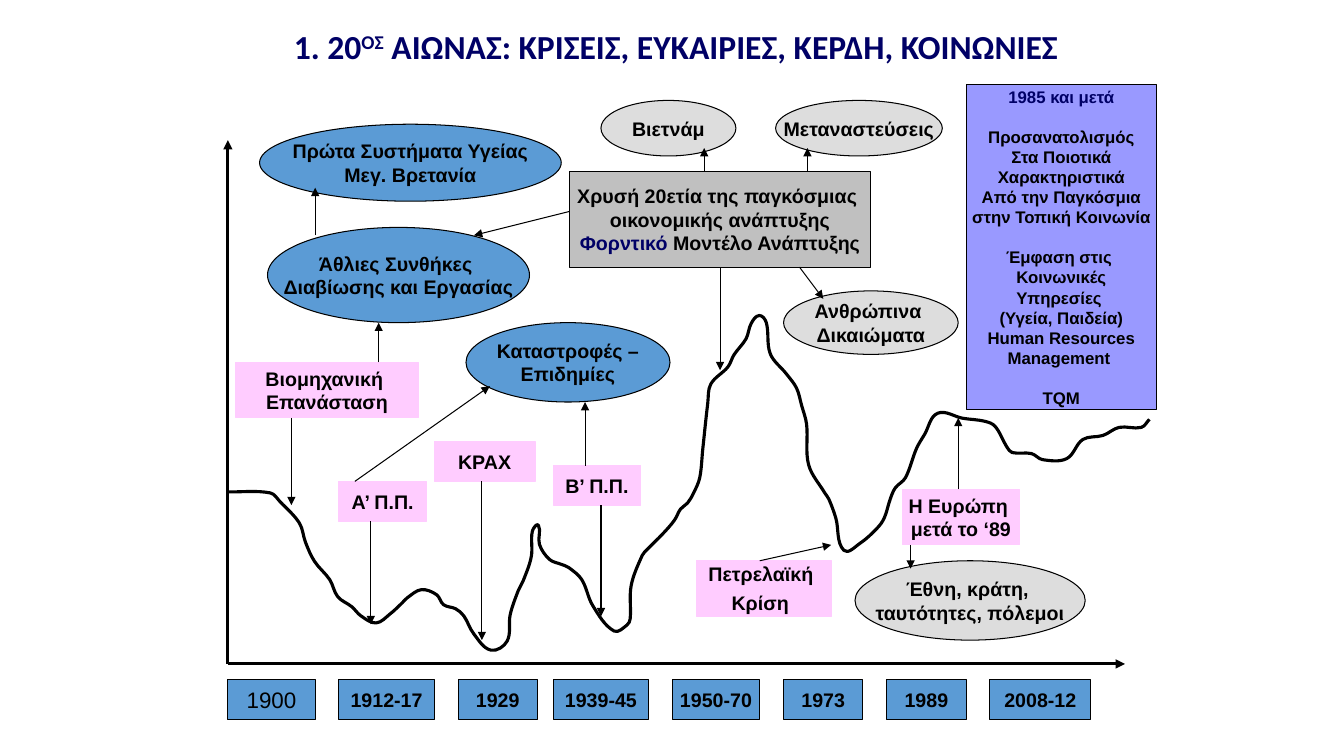
from math import hypot

from pptx import Presentation
from pptx.dml.color import RGBColor
from pptx.enum.shapes import MSO_CONNECTOR, MSO_SHAPE
from pptx.enum.text import MSO_ANCHOR, PP_ALIGN
from pptx.oxml.ns import qn
from pptx.util import Cm, Inches, Pt
from lxml.etree import SubElement

# Content: positions are grid cells (column, row) from the top of the vertical axis
COLORS = {"navy": "000066", "black": "000000", "blue": "5B9BD5", "pink": "FFCCFF",
          "silver": "C0C0C0", "gray": "DDDDDD", "violet": "9999FF"}
CELL, AXIS_LEFT, AXIS_TOP = Cm(0.2), Inches(2.26), Inches(1.39)
AXIS_ROWS, AXIS_COLUMNS = 66, 113
YEAR_ROW, YEAR_ROWS = 68, 5
FONT = "Arial"

TITLE = [("1. 20", None), ("ΟΣ", "30000"), (" ΑΙΩΝΑΣ: ΚΡΙΣΕΙΣ, ΕΥΚΑΙΡΙΕΣ, ΚΕΡΔΗ, ΚΟΙΝΩΝΙΕΣ", None)]

# label, column, width, size, bold
YEARS = [("1900", 0, 11, 16, False), ("1912-17", 14, 12, 14, True),
         ("1929", 29, 10, 14, True), ("1939-45", 41, 12, 14, True),
         ("1950-70", 56, 11, 14, True), ("1973", 70, 10, 14, True),
         ("1989", 83, 10, 14, True), ("2008-12", 96, 12.7, 14, True)]

# lines, column, row, width, height; a line is a string or a list of (text, style)
EVENTS = [
    (["Βιομηχανική ", "Επανάσταση"], 1, 28, 23, 7),
    (["Α’ Π.Π."], 14, 43, 11, 5),
    (["ΚΡΑΧ"], 26, 38, 12.7, 5),
    (["Β’ Π.Π."], 41, 41, 11, 5),
    (["Πετρελαϊκή ", [("Κρίση", {}), (" ", {"size": 18, "bold": False})]], 59, 53, 17, 7),
    (["Η Ευρώπη ", "μετά το ‘89"], 85, 44, 14.7, 7),
]
HEALTH_EFFECTS = [
    (["Άθλιες Συνθήκες ", "Διαβίωσης και Εργασίας"], 5, 11, 33, 12),
    (["Καταστροφές –", "Επιδημίες"], 30, 23, 25.7, 10),
    (["Πρώτα Συστήματα Υγείας", "Μεγ. Βρετανία"], 4, -2, 38, 9.7),
]
SOCIAL_EFFECTS = [
    (["Βιετνάμ"], 47, -5, 17, 7),
    (["Ανθρώπινα ", "Δικαιώματα"], 70, 19, 22, 8),
    (["Μεταναστεύσεις"], 69, -5, 21, 7),
    (["Έθνη, κράτη, ", "ταυτότητες, πόλεμοι"], 79, 53, 29, 10),
]
GOLDEN_AGE = (["Χρυσή 20ετία της παγκόσμιας ", "οικονομικής ανάπτυξης",
               [("Φορντικό", {"color": "navy"}), (" Μοντέλο Ανάπτυξης", {})]], 43, 4, 38, 12)
# An empty entry opens a gap before the next line
AFTER_1985 = ([[("1985 και μετά", {"color": "navy"})], "",
               "Προσανατολισμός", "Στα Ποιοτικά", "Χαρακτηριστικά",
               "Από την Παγκόσμια", "στην Τοπική Κοινωνία", "",
               "Έμφαση στις ", "Κοινωνικές", "Υπηρεσίες ", "(Υγεία, Παιδεία)",
               "Human Resources", "Management ", "", "TQM"], 93, -7, 24, 41)

# start column, start row, end column, end row
ARROWS = [(8, 35, 8, 46), (18, 48, 18, 61), (32, 43, 32, 63), (47, 46, 47, 60),
          (19, 28, 19, 23), (11, 12, 11, 6), (16, 43, 33, 31), (45, 41, 45, 33),
          (67, 53, 76, 51), (60, 4, 60, 1), (72, 16, 75, 20), (43, 9, 31, 12),
          (73, 4, 73, 1), (92, 44, 92, 35), (86, 51, 86, 54)]
GOLDEN_ARROW = (62, 16, 62, 29)

# Points of the economic wave, in inches
WAVE = [
    (2.25, 4.88), (2.68, 4.89), (2.78, 4.98), (2.97, 5.19), (3.03, 5.38), (3.12, 5.57),
    (3.27, 5.75), (3.35, 5.92), (3.49, 6.02), (3.58, 6.11), (3.73, 6.18), (3.87, 6.09),
    (3.99, 5.98), (4.04, 5.93), (4.18, 5.85), (4.33, 5.9), (4.4, 6), (4.52, 6.04),
    (4.6, 6.11), (4.7, 6.29), (4.87, 6.45), (5.03, 6.36), (5.06, 6.1),
    (5.14, 5.86), (5.19, 5.76), (5.27, 5.52), (5.28, 5.27), (5.34, 5.21), (5.35, 5.4),
    (5.45, 5.55), (5.57, 5.6), (5.64, 5.63), (5.77, 5.75), (5.88, 6.01), (6.09, 6.26),
    (6.22, 6.2), (6.25, 6.14), (6.26, 5.81), (6.37, 5.51), (6.42, 5.45), (6.57, 5.3),
    (6.69, 5.16), (6.75, 5.05), (6.82, 4.99), (6.88, 4.89), (6.94, 4.74), (6.97, 4.46),
    (7.02, 4), (7.05, 3.81), (7.22, 3.64), (7.28, 3.52), (7.4, 3.36), (7.45, 3.21),
    (7.53, 3.13), (7.6, 3.2), (7.64, 3.51), (7.8, 3.71), (7.9, 3.85), (7.95, 4.02),
    (8, 4.21), (8.02, 4.61), (8.18, 4.89), (8.22, 4.95), (8.29, 5.14),
    (8.37, 5.46), (8.53, 5.39), (8.7, 5.24), (8.77, 5.14), (8.83, 4.95),
    (8.88, 4.84), (8.98, 4.74), (9.09, 4.45), (9.17, 4.31), (9.3, 4.1),
    (9.55, 4.15), (9.77, 4.18), (9.87, 4.23), (9.99, 4.44), (10.04, 4.49), (10.23, 4.5),
    (10.34, 4.56), (10.58, 4.55), (10.74, 4.36), (10.94, 4.32), (11.1, 4.24),
    (11.32, 4.24), (11.4, 4.16)]

presentation = Presentation()
presentation.slide_width, presentation.slide_height = Inches(13.33), Inches(7.5)
slide = presentation.slides.add_slide(presentation.slide_layouts[5])


def color(name):
    return RGBColor.from_string(COLORS[name])


def place(column, row):
    return int(AXIS_LEFT + column * CELL), int(AXIS_TOP + row * CELL)


def format_run(run, size, bold=True, color_name="black", font_name=FONT):
    font = run.font
    font.name, font.size, font.bold = font_name, Pt(size), bold
    font.color.rgb = color(color_name)


def write_lines(text_frame, lines, size, bold):
    text_frame.word_wrap = False
    text_frame.vertical_anchor = MSO_ANCHOR.MIDDLE
    paragraph, gap = text_frame.paragraphs[0], False
    for index, line in enumerate(lines):
        if not line:
            gap = True
            continue
        if index:
            paragraph = text_frame.add_paragraph()
        paragraph.alignment = PP_ALIGN.CENTER
        if gap:
            paragraph.space_before = Pt(size * 1.17)
            gap = False
        for text, style in [(line, {})] if isinstance(line, str) else line:
            run = paragraph.add_run()
            run.text = text
            format_run(run, style.get("size", size), style.get("bold", bold),
                       style.get("color", "black"))


def add_box(box, fill, line="black", kind=MSO_SHAPE.RECTANGLE, size=14, bold=True):
    lines, column, row, width, height = box
    shape = slide.shapes.add_shape(kind, *place(column, row),
                                   int(width * CELL), int(height * CELL))
    shape.shadow.inherit = False
    shape.fill.solid()
    shape.fill.fore_color.rgb = color(fill)
    shape.line.color.rgb = color(line)
    shape.line.width = Pt(0.75)
    write_lines(shape.text_frame, lines, size, bold)
    return shape


def add_arrow(ends, width=0.75):
    arrow = slide.shapes.add_connector(MSO_CONNECTOR.STRAIGHT,
                                       *place(*ends[:2]), *place(*ends[2:]))
    arrow.line.color.rgb = color("black")
    arrow.line.width = Pt(width)
    SubElement(arrow.line._get_or_add_ln(), qn("a:tailEnd"), type="triangle")
    SubElement(arrow._element.spPr, qn("a:effectLst"))
    return arrow


def round_corners(shape):
    """Turn each straight segment into a cubic one, handles a third of its length."""
    segments = list(shape._element.iter(qn("a:moveTo"), qn("a:lnTo")))
    points = [(int(segment[0].get("x")), int(segment[0].get("y"))) for segment in segments]
    directions = []
    for before, after in zip(points[:1] + points, points[1:] + points[-1:]):
        dx, dy = after[0] - before[0], after[1] - before[1]
        directions.append((dx / hypot(dx, dy), dy / hypot(dx, dy)))
    for index, segment in enumerate(segments[1:], 1):
        (x1, y1), (x2, y2) = points[index - 1:index + 1]
        (u1, v1), (u2, v2) = directions[index - 1:index + 1]
        handle = hypot(x2 - x1, y2 - y1) / 3
        segment.tag = qn("a:cubicBezTo")
        segment.remove(segment[0])
        for x, y in [(x1 + handle * u1, y1 + handle * v1),
                     (x2 - handle * u2, y2 - handle * v2), (x2, y2)]:
            SubElement(segment, qn("a:pt"), x=str(round(x)), y=str(round(y)))


# Title
title = slide.shapes.title
title.left, title.top, title.width, title.height = map(Inches, (1.94, 0.21, 9.53, 0.54))
title.text_frame.vertical_anchor = MSO_ANCHOR.MIDDLE
heading = title.text_frame.paragraphs[0]
heading.alignment, heading.line_spacing = PP_ALIGN.CENTER, 0.9
for text, baseline in TITLE:
    run = heading.add_run()
    run.text = text
    format_run(run, 24, color_name="navy", font_name="Calibri")
    if baseline:
        run._r.get_or_add_rPr().set("baseline", baseline)

# Axes and years
for axis_end in [(0, 0), (AXIS_COLUMNS, AXIS_ROWS)]:
    add_arrow((0, AXIS_ROWS, *axis_end), 2.25)
for label, column, width, size, bold in YEARS:
    add_box(([label], column, YEAR_ROW, width, YEAR_ROWS), "blue", size=size, bold=bold)

# Economic wave
corners = [(Inches(x), Inches(y)) for x, y in WAVE]
builder = slide.shapes.build_freeform(*corners[0])
builder.add_line_segments(corners[1:], close=False)
wave = builder.convert_to_shape()
round_corners(wave)
wave.shadow.inherit = False
wave.fill.background()
wave.line.color.rgb = color("black")
wave.line.width = Pt(2.25)

# Events and their effects
for event in EVENTS:
    add_box(event, "pink", "pink")
for effects, fill in [(HEALTH_EFFECTS, "blue"), (SOCIAL_EFFECTS, "gray")]:
    for effect in effects:
        add_box(effect, fill, kind=MSO_SHAPE.OVAL)
golden_age = add_box(GOLDEN_AGE, "silver")
add_box(AFTER_1985, "violet", size=12)

# Arrows
for ends in ARROWS:
    add_arrow(ends)
add_arrow(GOLDEN_ARROW).begin_connect(golden_age, 2)

presentation.save("out.pptx")
